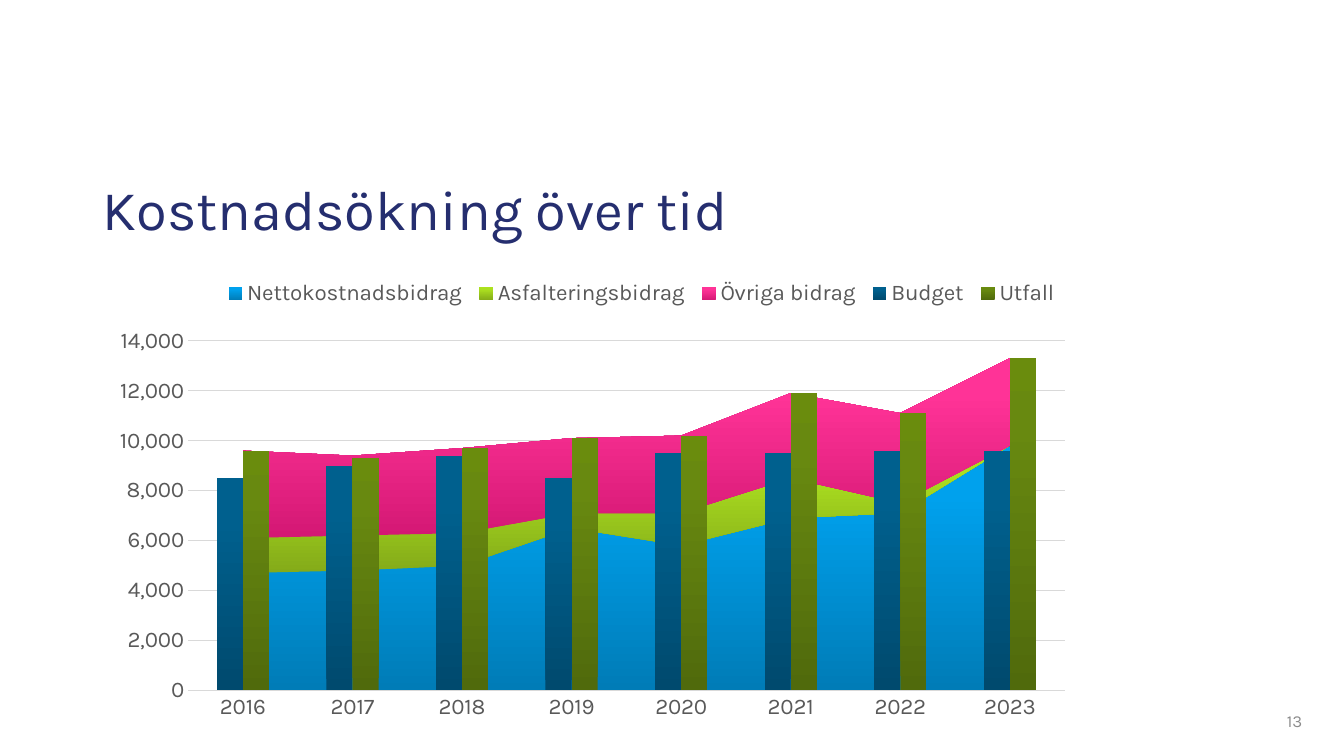
from lxml import etree
from pptx import Presentation
from pptx.chart.data import CategoryChartData
from pptx.dml.color import RGBColor
from pptx.enum import chart as charts, text
from pptx.oxml import ns, parse_xml
from pptx.util import Pt

NAVY = RGBColor(0x25, 0x2E, 0x6F)
GREY = RGBColor(0x59, 0x59, 0x59)
PALE_GREY = RGBColor(0xD9, 0xD9, 0xD9)
NUMBER_GREY = RGBColor(0x8C, 0x8C, 0x8C)
FONT = "Karla"

SERIES = [
    ("Nettokostnadsbidrag", (4700, 4800, 5000, 6500, 5800, 6900, 7100, 9800),
     (RGBColor(0x00, 0x7C, 0xB7), RGBColor(0x00, 0xA1, 0xED), RGBColor(0x00, 0xA2, 0xEE))),
    ("Asfalteringsbidrag", (1400, 1400, 1300, 600, 1300, 1600, 400, 0),
     (RGBColor(0x84, 0xAB, 0x19), RGBColor(0xAB, 0xDF, 0x20), RGBColor(0xAD, 0xE3, 0x1D))),
    ("Övriga bidrag", (3500, 3200, 3400, 3000, 3100, 3400, 3600, 3500),
     (RGBColor(0xD4, 0x18, 0x74), RGBColor(0xFF, 0x33, 0x97), RGBColor(0xFF, 0x35, 0x98))),
    ("Budget", (8500, 9000, 9400, 8500, 9500, 9500, 9600, 9600),
     (RGBColor(0x00, 0x4A, 0x6E), RGBColor(0x00, 0x60, 0x8E), RGBColor(0x00, 0x61, 0x8F))),
    ("Utfall", (9600, 9300, 9700, 10100, 10200, 11900, 11100, 13300),
     (RGBColor(0x50, 0x6A, 0x0C), RGBColor(0x68, 0x89, 0x10), RGBColor(0x6A, 0x8C, 0x0D))),
]
AREA_COUNT = 3


def style_font(font, size, color):
    font.name = FONT
    font.size = Pt(size)
    font.color.rgb = color


def set_layout(parent, index, x, y, width, height, target=""):
    for layout in parent.findall(ns.qn("c:layout")):
        parent.remove(layout)
    parent.insert(index, parse_xml(
        f'<c:layout {ns.nsdecls("c")}><c:manualLayout>{target}'
        '<c:xMode val="edge"/><c:yMode val="edge"/>'
        f'<c:x val="{x}"/><c:y val="{y}"/><c:w val="{width}"/><c:h val="{height}"/>'
        '</c:manualLayout></c:layout>'))


presentation = Presentation()
presentation.slide_width = Pt(960)
presentation.slide_height = Pt(540)
slide = presentation.slides.add_slide(presentation.slide_layouts[5])

title = slide.shapes.title
title.left, title.top, title.width, title.height = Pt(66.2), Pt(78.5), Pt(738), Pt(98.6)
title.text_frame.vertical_anchor = text.MSO_ANCHOR.BOTTOM
paragraph = title.text_frame.paragraphs[0]
paragraph.alignment = text.PP_ALIGN.LEFT
paragraph.line_spacing = 0.9
run = paragraph.add_run()
run.text = "Kostnadsökning över tid"
style_font(run.font, 40, NAVY)

number_box = slide.shapes.add_textbox(Pt(721.4), Pt(500.4), Pt(216), Pt(28.8))
number_box.text_frame.word_wrap = True
number_box.text_frame.vertical_anchor = text.MSO_ANCHOR.MIDDLE
paragraph = number_box.text_frame.paragraphs[0]
paragraph.alignment = text.PP_ALIGN.RIGHT
run = paragraph.add_run()
run.text = "13"
style_font(run.font, 12, NUMBER_GREY)

chart_data = CategoryChartData(number_format="#,##0")
chart_data.categories = [str(year) for year in range(2016, 2024)]
for name, values, colors in SERIES:
    chart_data.add_series(name, values)
chart = slide.shapes.add_chart(
    charts.XL_CHART_TYPE.AREA_STACKED, Pt(32.4), Pt(182.6), Pt(728.6), Pt(337.7), chart_data).chart
chart.has_title = False
style_font(chart.font, 16, GREY)
chart.plots[0].vary_by_categories = False

category_axis = chart.category_axis
value_axis = chart.value_axis
for axis in (category_axis, value_axis):
    axis.major_tick_mark = charts.XL_TICK_MARK.NONE
    axis.minor_tick_mark = charts.XL_TICK_MARK.NONE
    style_font(axis.tick_labels.font, 16, GREY)
category_axis.has_major_gridlines = False
category_axis.format.line.color.rgb = PALE_GREY
category_axis.format.line.width = Pt(1)
value_axis.format.line.fill.background()
value_axis.minimum_scale = 0
value_axis.maximum_scale = 14000
value_axis.major_unit = 2000
value_axis.tick_labels.number_format = "#,##0"
value_axis.tick_labels.number_format_is_linked = False
value_axis.has_major_gridlines = True
value_axis.major_gridlines.format.line.color.rgb = PALE_GREY
value_axis.major_gridlines.format.line.width = Pt(0.75)
value_axis._element.find(ns.qn("c:crossBetween")).set("val", "between")

chart.has_legend = True
chart.legend.position = charts.XL_LEGEND_POSITION.BOTTOM
chart.legend.include_in_layout = False
style_font(chart.legend.font, 16, GREY)
set_layout(chart.legend._element, 1, 0.17, 0.04, 0.83, 0.08)

all_series = list(chart.plots[0].series)
for series, (name, values, colors) in zip(all_series, SERIES):
    series.format.line.fill.background()
    stops = "".join(
        f'<a:gs pos="{position * 1000}"><a:srgbClr val="{color}"/></a:gs>'
        for position, color in zip((0, 80, 100), colors))
    gradient = parse_xml(
        f'<a:gradFill {ns.nsdecls("a")} rotWithShape="1"><a:gsLst>{stops}</a:gsLst>'
        '<a:lin ang="16200000" scaled="0"/></a:gradFill>')
    series._element.get_or_add_spPr().insert(0, gradient)

plot_area = chart._chartSpace.find(".//" + ns.qn("c:plotArea"))
set_layout(plot_area, 0, 0.14, 0.18, 0.86, 0.74, '<c:layoutTarget val="inner"/>')

area_chart = plot_area.find(ns.qn("c:areaChart"))
bar_chart = parse_xml(
    f'<c:barChart {ns.nsdecls("c")}><c:barDir val="col"/><c:grouping val="clustered"/>'
    '<c:varyColors val="0"/></c:barChart>')
for series in all_series[AREA_COUNT:]:
    bar_chart.append(series._element)
etree.SubElement(bar_chart, ns.qn("c:gapWidth")).set("val", "219")
for axis_id in area_chart.findall(ns.qn("c:axId")):
    etree.SubElement(bar_chart, ns.qn("c:axId")).set("val", axis_id.get("val"))
area_chart.addnext(bar_chart)

presentation.save("out.pptx")
